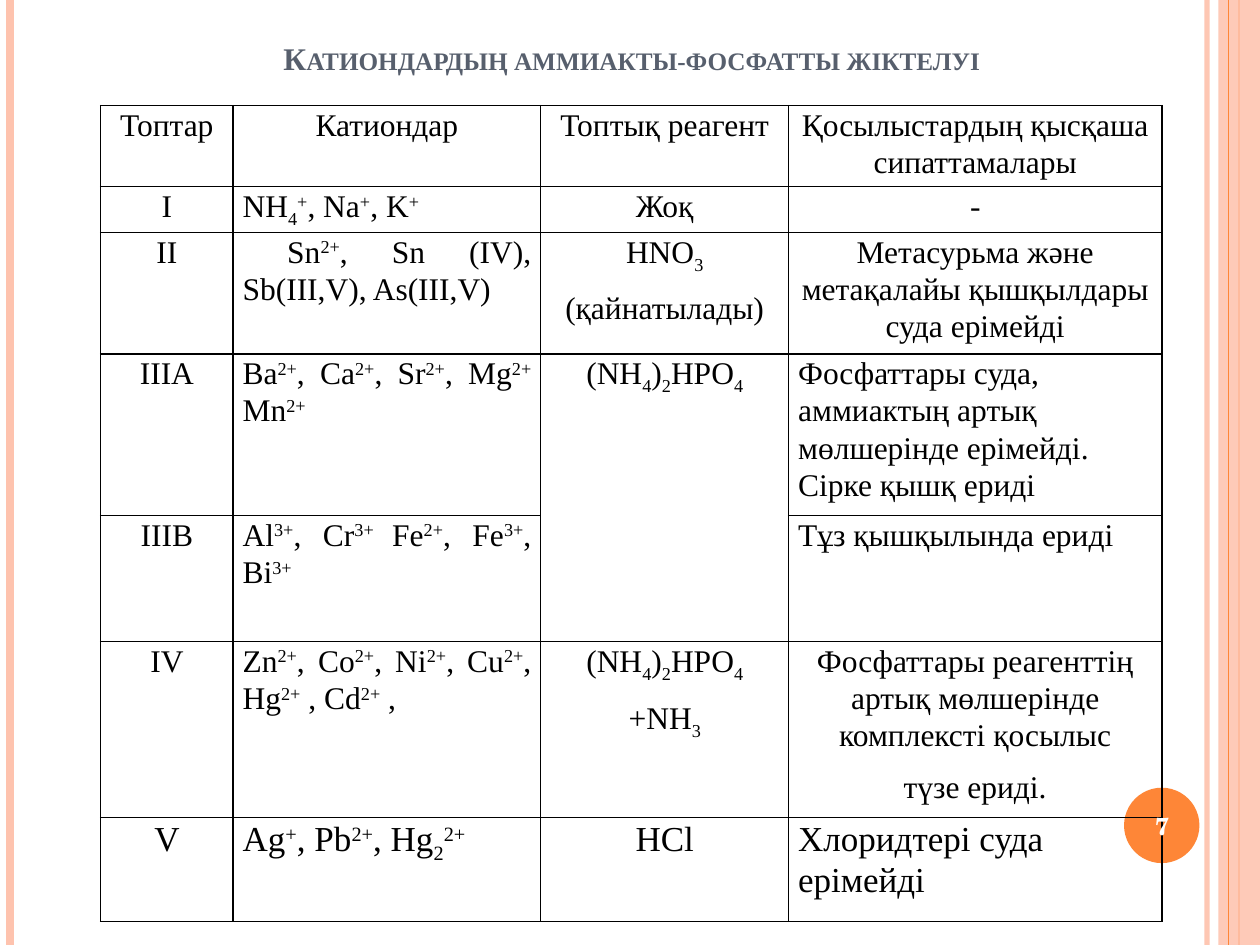
import pptx
import pptx.util
import pptx.dml.color
import pptx.enum.shapes
import pptx.enum.text
import pptx.oxml
import pptx.oxml.ns
from dataclasses import dataclass
from lxml import etree

Cm, Pt = pptx.util.Cm, pptx.util.Pt
RGB = pptx.dml.color.RGBColor.from_string
Kind = pptx.enum.shapes.MSO_SHAPE
Align = pptx.enum.text.PP_ALIGN
Anchor = pptx.enum.text.MSO_ANCHOR
qn = pptx.oxml.ns.qn


@dataclass
class Theme:
    pale: str = "FEC3AE"
    bright: str = "FE8637"
    slate: str = "575F6D"
    ink: str = "000000"
    white: str = "FFFFFF"
    body: int = 18
    large: int = 20
    small: int = 14
    serif: str = "Times New Roman"
    school: str = "TeX Gyre Schola"


theme = Theme()


def style(font, size, color, name=theme.serif, bold=False):
    font.size, font.name, font.bold = Pt(size), name, bold
    font.color.rgb = RGB(color)


def fade(shape, alpha):
    tint = next(shape._element.spPr.iter(qn("a:srgbClr")))
    etree.SubElement(tint, qn("a:alpha")).set("val", str(alpha * 1000))


deck = pptx.Presentation()
deck.slide_width, deck.slide_height = Cm(25.4), Cm(19.05)
slide = deck.slides.add_slide(deck.slide_layouts[6])
shapes = slide.shapes

# Side band and vertical stripes
band = shapes.add_shape(Kind.RECTANGLE, Cm(24.56), 0, Cm(0.84), Cm(19.05))
disc = shapes.add_shape(Kind.OVAL, Cm(22.66), Cm(15.88), Cm(1.52), Cm(1.52))
for shape, color in ((band, theme.pale), (disc, theme.bright)):
    shape.shadow.inherit = False
    shape.fill.solid()
    shape.fill.fore_color.rgb = RGB(color)
    shape.line.fill.background()
fade(band, 87)

stripes = []
for x, color, width in ((24.33, theme.pale, 3), (0.2, theme.pale, 4.5),
                        (24.98, theme.bright, 1.5), (24.77, theme.bright, 0.75)):
    line = shapes.add_connector(
        pptx.enum.shapes.MSO_CONNECTOR.STRAIGHT, Cm(x), 0, Cm(x), Cm(19.05))
    line.line.color.rgb = RGB(color)
    line.line.width = Pt(width)
    etree.SubElement(line._element.spPr, qn("a:effectLst"))
    stripes.append(line)
fade(stripes[0], 93)
stripes[2].begin_connect(band, 0)
stripes[2].end_connect(band, 2)

# Order: band over its middle stripe, then the thin stripe and the disc
for shape in (band, stripes[3], disc):
    shapes._spTree.append(shape._element)

# Title
box = shapes.add_textbox(Cm(2.36), Cm(0.33), Cm(20.75), Cm(1.35))
frame = box.text_frame
frame.word_wrap = True
frame.vertical_anchor = Anchor.BOTTOM
frame.text = "Катиондардың аммиакты-фосфатты жіктелуі"
para = frame.paragraphs[0]
para.alignment = Align.CENTER
para.line_spacing = 1.07
run = para.runs[0]
style(run.font, theme.body, theme.slate, bold=True)
run.font._element.set("cap", "small")

# Table text: "|" parts the runs, "^" raises and "_" lowers one
rows = [
    ("Топтар", "Катиондар", "Топтық реагент",
     "Қосылыстардың қысқаша сипаттамалары"),
    ("I", "NH|_4|^+|, Na|^+|, K|^+", "Жоқ", "-"),
    ("II", "Sn|^2+|, Sn (IV), Sb(III,V), As(III,V)",
     "HNO|_3\n(қайнатылады)",
     "Метасурьма және метақалайы қышқылдары суда ерімейді"),
    ("IIIА", "Ba|^2+|, Ca|^2+|, Sr|^2+|, Mg|^2+| Mn|^2+",
     "(NH|_4|)|_2|HPO|_4",
     "Фосфаттары суда, аммиактың артық мөлшерінде ерімейді. "
     "Сірке қышқ ериді"),
    ("IIIВ", "Al|^3+|, Cr|^3+ |Fe|^2+|, Fe|^3+|, Bi|^3+", "",
     "Тұз қышқылында ериді"),
    ("IV", "Zn|^2+|, Co|^2+|, Ni|^2+|, Cu|^2+|, Hg|^2+| , Cd|^2+| ,",
     "(NH|_4|)|_2|HPO|_4\n+NH|_3",
     "Фосфаттары реагенттің артық мөлшерінде комплексті қосылыс\n"
     "түзе ериді."),
    ("V", "Ag|^+|, Pb|^2+|, Hg|_2|^2+", "HCl", "Хлоридтері суда ерімейді"),
]
widths = (2.67, 6.2, 5, 7.52)
heights = (1.62, 0.86, 2.42, 3, 2.54, 3.28, 2.1)
shift = {"^": "30000", "_": "-25000"}
left = {(3, 3), (4, 3), (6, 3)}

# Table
grid = shapes.add_table(len(rows), len(widths), Cm(2.03), Cm(2.13),
                        Cm(sum(widths)), Cm(sum(heights))).table
grid.first_row = grid.horz_banding = False
for col, width in zip(grid.columns, widths):
    col.width = Cm(width)
for row, height in zip(grid.rows, heights):
    row.height = Cm(height)
grid.cell(3, 2).merge(grid.cell(4, 2))

for r, row in enumerate(rows):
    size = theme.large if r == len(rows) - 1 else theme.body
    for c, text in enumerate(row):
        cell = grid.cell(r, c)
        cell.margin_left = cell.margin_right = Cm(0.19)
        cell.margin_top = cell.margin_bottom = 0
        cell.fill.background()
        props = cell._tc.get_or_add_tcPr()
        for i, side in enumerate(("lnL", "lnR", "lnT", "lnB")):
            edge = etree.Element(qn("a:" + side), w=str(Pt(1)))
            fill = etree.SubElement(edge, qn("a:solidFill"))
            etree.SubElement(fill, qn("a:srgbClr"), val=theme.ink)
            props.insert(i, edge)
        if cell.is_spanned:
            continue
        for i, words in enumerate(text.split("\n")):
            frame = cell.text_frame
            para = frame.add_paragraph() if i else frame.paragraphs[0]
            para.line_spacing = 1.07
            para.space_after = Pt(8)
            if (r, c) in left:
                para.alignment = Align.LEFT
            elif c == 1 and r:
                para.alignment = Align.JUSTIFY
            else:
                para.alignment = Align.CENTER
            for part in words.split("|"):
                run = para.add_run()
                run.text = part.lstrip("^_")
                style(run.font, size, theme.ink)
                if part[0] in shift:
                    run.font._element.set("baseline", shift[part[0]])

# The first line of group II is indented
para = grid.cell(2, 1).text_frame.paragraphs[0]
para._p.get_or_add_pPr().set("indent", str(Cm(0.9)))

# Page number
box = shapes.add_textbox(Cm(22.58), Cm(15.93), Cm(1.7), Cm(1.45))
frame = box.text_frame
frame.word_wrap = True
frame.vertical_anchor = Anchor.MIDDLE
frame.text = "7"
para = frame.paragraphs[0]
para.alignment = Align.CENTER
style(para.runs[0].font, theme.small, theme.white, theme.school, True)

deck.save("out.pptx")
